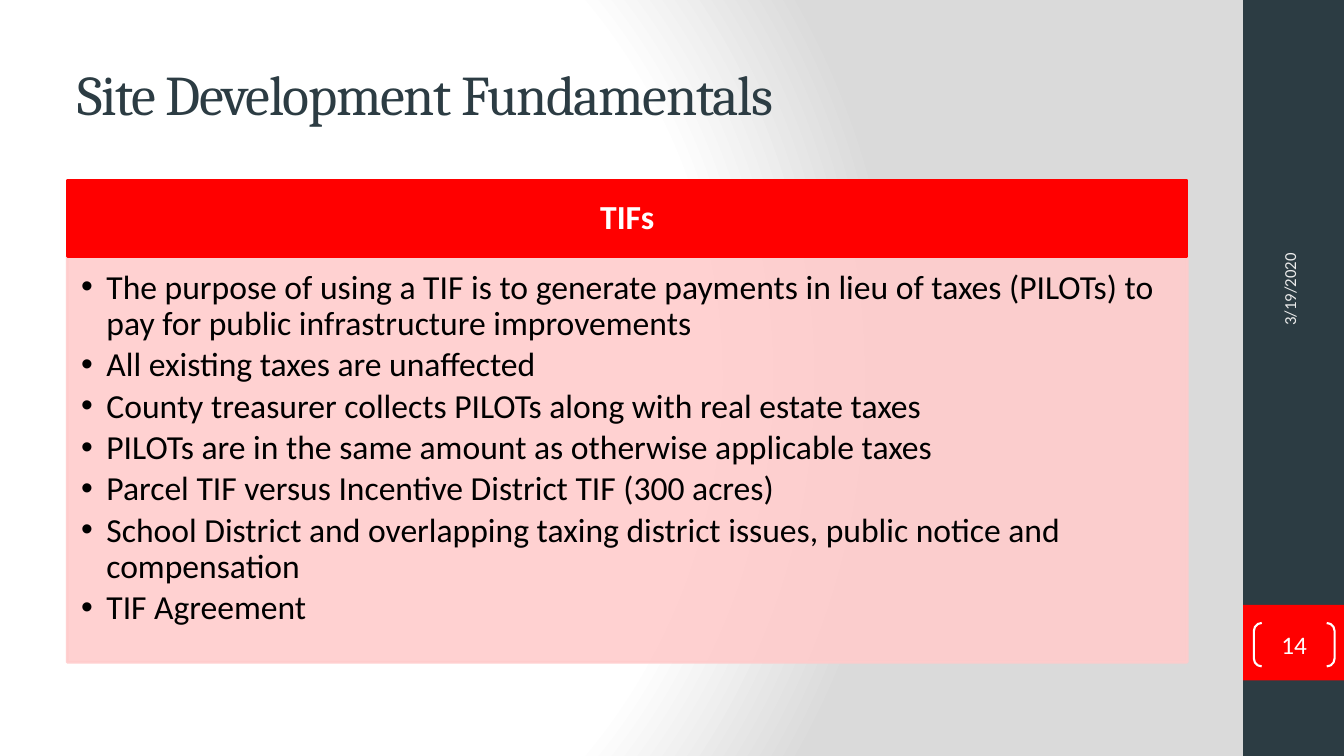
from lxml.etree import SubElement
from pptx import Presentation
from pptx.dml.color import RGBColor
from pptx.enum.shapes import MSO_SHAPE as Shape
from pptx.enum.text import MSO_ANCHOR as Anchor, MSO_AUTO_SIZE as AutoSize, PP_ALIGN as Align
from pptx.oxml import parse_xml
from pptx.oxml.ns import nsdecls, qn
from pptx.util import Pt

COLORS = {
    "slate": "2C3C43", "red": "FF0000", "pink": "FFCCCC", "white": "FFFFFF",
    "gray": "DADADA", "pale": "EBEBEB", "black": "000000",
}
POINTS = [
    "The purpose of using a TIF is to generate payments in lieu of taxes (PILOTs) to pay for public infrastructure improvements",
    "All existing taxes are unaffected",
    "County treasurer collects PILOTs along with real estate taxes",
    "PILOTs are in the same amount as otherwise applicable taxes",
    "Parcel TIF versus Incentive District TIF (300 acres)",
    "School District and overlapping taxing district issues, public notice and compensation",
    "TIF Agreement",
]
LEFT, WIDTH = 48, 800
BAR_LEFT, BAR_WIDTH = 888, 72


def add_block(kind, left, top, width, height, fill=None, line=None, weight=2):
    block = page.shapes.add_shape(kind, Pt(left), Pt(top), Pt(width), Pt(height))
    block.shadow.inherit = False
    if fill:
        block.fill.solid()
        block.fill.fore_color.rgb = RGBColor.from_string(COLORS[fill])
    else:
        block.fill.background()
    if line:
        block.line.color.rgb = RGBColor.from_string(COLORS[line])
        block.line.width = Pt(weight)
    else:
        block.line.fill.background()
    return block


def style_text(para, size, color, align=Align.LEFT, name="Calibri", bold=False):
    para.alignment = align
    para.font.name = name
    para.font.size = Pt(size)
    para.font.bold = bold
    para.font.color.rgb = RGBColor.from_string(COLORS[color])


deck = Presentation()
deck.slide_width, deck.slide_height = Pt(960), Pt(540)
page = deck.slides.add_slide(deck.slide_layouts[1])

page.background.fill.solid()
backdrop = page.element.xpath(".//p:bgPr")[0]
gradient = parse_xml(
    f'<a:gradFill {nsdecls("a")} rotWithShape="1"><a:gsLst>'
    + "".join(
        f'<a:gs pos="{stop * 1000}"><a:srgbClr val="{COLORS[color]}"/></a:gs>'
        for stop, color in [(0, "white"), (75, "white"), (100, "gray")]
    )
    + '</a:gsLst><a:path path="circle">'
    '<a:fillToRect l="20000" t="50000" r="100000" b="50000"/></a:path></a:gradFill>'
)
backdrop.replace(backdrop[0], gradient)

add_block(Shape.RECTANGLE, BAR_LEFT, 0, BAR_WIDTH, 540, "slate")
add_block(Shape.RECTANGLE, BAR_LEFT, 432, BAR_WIDTH, 54, "red")

title = page.shapes.title
title.left, title.top, title.width, title.height = Pt(LEFT), Pt(21.6), Pt(WIDTH), Pt(90)
title.text_frame.text = "Site Development Fundamentals"
title.text_frame.auto_size = AutoSize.NONE
title.text_frame.vertical_anchor = Anchor.MIDDLE
para = title.text_frame.paragraphs[0]
style_text(para, 40, "slate", name="Cambria")
para.runs[0].font.size = Pt(40)
para.runs[0].font._element.set("spc", "-100")

header = add_block(Shape.RECTANGLE, LEFT, 128.6, WIDTH, 54.4, "red", "red")
header.text_frame.text = "TIFs"
header.text_frame.vertical_anchor = Anchor.MIDDLE
para = header.text_frame.paragraphs[0]
para.line_spacing = 0.9
style_text(para, 24, "white", Align.CENTER, bold=True)

body = page.placeholders[1]
body.left, body.top, body.width, body.height = Pt(LEFT), Pt(183), Pt(WIDTH), Pt(290)
body.fill.solid()
body.fill.fore_color.rgb = RGBColor.from_string(COLORS["pink"])
body.line.color.rgb = RGBColor.from_string(COLORS["pink"])
body.line.width = Pt(2)
for tint in body.element.spPr.iter(qn("a:srgbClr")):
    SubElement(tint, qn("a:alpha"), val="90000")
frame = body.text_frame
frame.auto_size = AutoSize.NONE
frame.vertical_anchor = Anchor.TOP
frame.margin_left, frame.margin_top = Pt(10), Pt(10)
frame.margin_right, frame.margin_bottom = Pt(13.5), Pt(15)
frame.text = "\n".join(POINTS)
for para in frame.paragraphs:
    props = para._p.get_or_add_pPr()
    props.set("marL", str(Pt(18)))
    props.set("indent", str(-Pt(18)))
    SubElement(props, qn("a:buFont"), typeface="Arial")
    SubElement(props, qn("a:buChar"), char="•")
    para.line_spacing = 0.9
    para.space_before = Pt(0)
    para.space_after = Pt(3.6)
    style_text(para, 24, "black")

date = page.shapes.add_textbox(Pt(825), Pt(124.6), Pt(192), Pt(38))
date.rotation = 270
date.text_frame.word_wrap = True
date.text_frame.vertical_anchor = Anchor.MIDDLE
date.text_frame.text = "3/19/2020"
style_text(date.text_frame.paragraphs[0], 12, "pale")

number = add_block(Shape.DOUBLE_BRACKET, 895.7, 445, 57.6, 31, line="white", weight=1.5)
number.adjustments[0] = 0.18
frame = number.text_frame
frame.margin_left = frame.margin_top = frame.margin_right = frame.margin_bottom = 0
frame.vertical_anchor = Anchor.MIDDLE
frame.text = "14"
style_text(frame.paragraphs[0], 18, "white", Align.CENTER)

deck.save("out.pptx")
